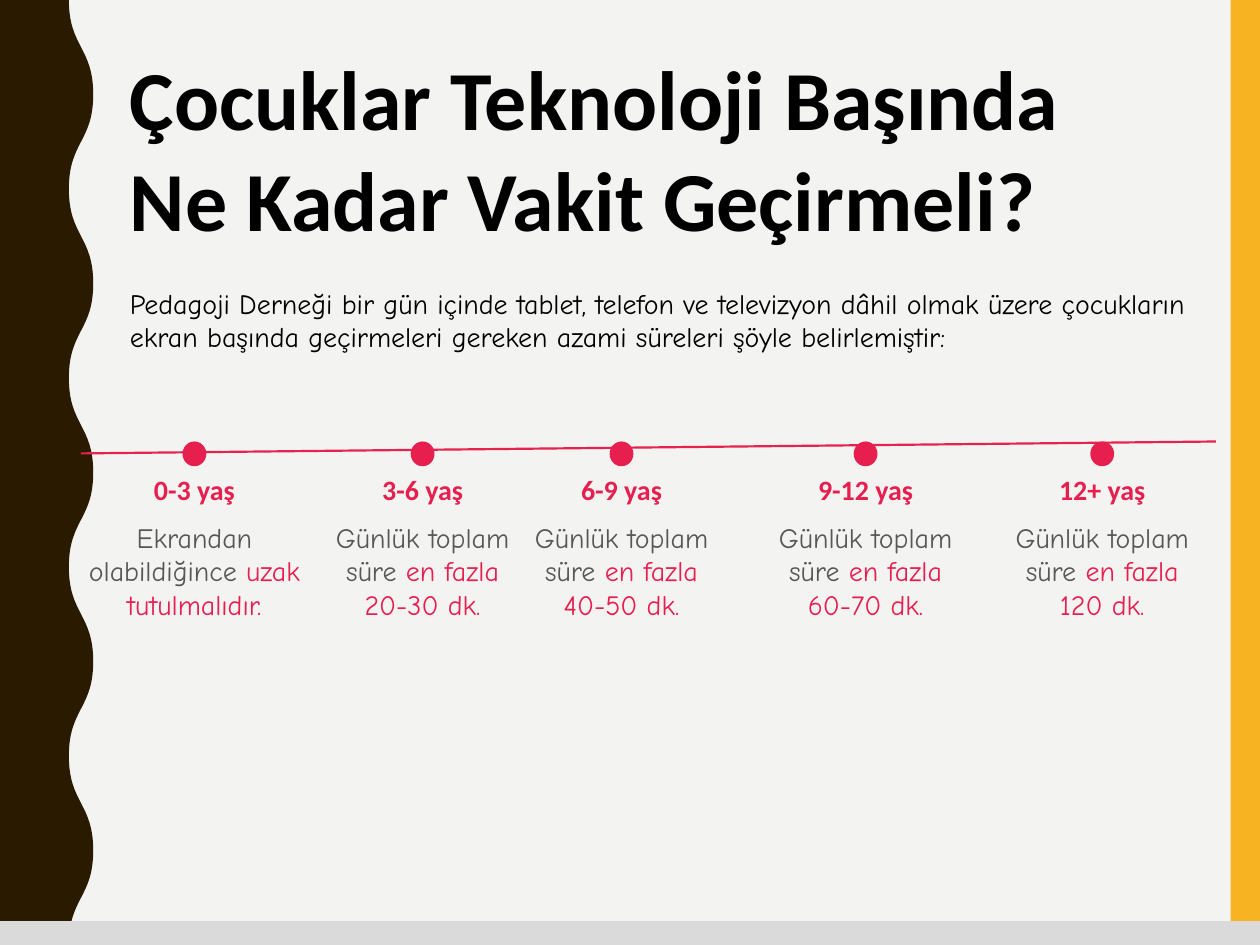
from dataclasses import dataclass

from lxml import etree
from pptx import Presentation
from pptx import util as u
from pptx.dml import color
from pptx.enum import shapes, text
from pptx.oxml import ns

WIDTH, HEIGHT = 25.4, 19.05
DARK, YELLOW, GREY_BAR = "2A1A00", "F8B323", "DADADA"
BACKGROUND, BLACK, GREY = "F3F3F2", "000000", "575757"
RED, LINE_RED = "E61F4F", "E6224F"
HEADING_FONT, BODY_FONT = "Calibri", "Comic Neue"


@dataclass
class Stage:
    center: float
    age: str
    lines: list[list[tuple[str, str]]]
    label_width: float = 2.16
    text_width: float = 4.2


def limited(center: float, age: str, limit: str, label_width: float = 2.16) -> Stage:
    return Stage(center, age, [
        [("Günlük toplam", GREY)],
        [("süre ", GREY), ("en fazla", RED)],
        [(limit, RED)],
    ], label_width)


STAGES = [
    Stage(3.92, "0-3 yaş", [
        [("Ekrandan", GREY)],
        [("olabildiğince ", GREY), ("uzak", RED)],
        [("tutulmalıdır.", RED)],
    ], text_width=5.16),
    limited(8.52, "3-6 yaş", "20-30 dk."),
    limited(12.53, "6-9 yaş", "40-50 dk."),
    limited(17.45, "9-12 yaş", "60-70 dk.", 2.5),
    limited(22.22, "12+ yaş", "120 dk.", 2.3),
]
INTRO = (
    "Pedagoji Derneği bir gün içinde tablet, telefon ve televizyon dâhil olmak "
    "üzere çocukların ekran başında geçirmeleri gereken azami süreleri şöyle "
    "belirlemiştir:"
)


def paint(target, hex_color: str) -> None:
    target.solid()
    target.fore_color.rgb = color.RGBColor.from_string(hex_color)


def finish(shape, hex_color: str) -> None:
    paint(shape.fill, hex_color)
    shape.line.fill.background()
    shape.shadow.inherit = False


def add_block(parent, kind, left: float, top: float, width: float, height: float,
              hex_color: str) -> None:
    shape = parent.add_shape(kind, u.Cm(left), u.Cm(top), u.Cm(width), u.Cm(height))
    finish(shape, hex_color)


def add_wave(parent, inner: float, outer: float, half_waves: int) -> None:
    step = HEIGHT / half_waves
    corners = [(u.Cm(outer if wave % 2 else inner), u.Cm(wave * step))
               for wave in range(half_waves + 1)]
    builder = parent.build_freeform(*corners[0], scale=1.0)
    builder.add_line_segments([*corners[1:], (0, u.Cm(HEIGHT)), (0, 0)], close=True)
    shape = builder.convert_to_shape()
    segments = list(shape._element.iter(ns.qn("a:lnTo")))[:half_waves]
    for segment, (start_x, start_y), (end_x, end_y) in zip(segments, corners, corners[1:]):
        middle = (start_y + end_y) // 2
        segment.tag = ns.qn("a:cubicBezTo")
        for index, x in enumerate((start_x, end_x)):
            control = etree.Element(ns.qn("a:pt"), x=str(int(x)), y=str(middle))
            segment.insert(index, control)
    finish(shape, DARK)


def add_timeline(parent) -> None:
    line = parent.add_connector(shapes.MSO_CONNECTOR.STRAIGHT,
                                u.Cm(1.63), u.Cm(9.14), u.Cm(24.51), u.Cm(8.9))
    paint(line.line.fill, LINE_RED)
    line.line.width = u.Pt(1.25)
    etree.SubElement(line._element.spPr, ns.qn("a:effectLst"))


def add_text(parent, left: float, top: float, width: float, height: float,
             lines: list[list[tuple[str, str]]], wrap: bool = False):
    box = parent.add_textbox(u.Cm(left), u.Cm(top), u.Cm(width), u.Cm(height))
    frame = box.text_frame
    frame.word_wrap = wrap
    frame.auto_size = text.MSO_AUTO_SIZE.SHAPE_TO_FIT_TEXT
    for index, pieces in enumerate(lines):
        paragraph = frame.add_paragraph() if index else frame.paragraphs[0]
        for wording, hex_color in pieces:
            run = paragraph.add_run()
            run.text = wording
            paint(run.font.fill, hex_color)
    return frame.paragraphs


def set_font(paragraph, name: str, size: float, bold: bool = False) -> None:
    paragraph.font.name = name
    paragraph.font.size = u.Pt(size)
    paragraph.font.bold = bold


def add_heading(parent) -> None:
    wordings = ["Çocuklar Teknoloji Başında", "Ne Kadar Vakit Geçirmeli?", INTRO]
    *title, intro = add_text(parent, 2.37, 0.81, 21.82, 7.87,
                             [[(wording, BLACK)] for wording in wordings], wrap=True)
    for paragraph in title:
        set_font(paragraph, HEADING_FONT, 48, bold=True)
    set_font(intro, BODY_FONT, 16)
    intro.space_before = u.Pt(22)


def add_stage(parent, stage: Stage) -> None:
    group = parent.add_group_shape().shapes
    add_block(group, shapes.MSO_SHAPE.OVAL, stage.center - 0.24, 8.9, 0.48, 0.5, RED)
    label = add_text(group, stage.center - stage.label_width / 2, 9.41,
                     stage.label_width, 0.94, [[(stage.age, RED)]])
    advice = add_text(group, stage.center - stage.text_width / 2, 10.36,
                      stage.text_width, 2.31, stage.lines)
    for paragraph in label:
        set_font(paragraph, HEADING_FONT, 16, bold=True)
    for paragraph in advice:
        set_font(paragraph, BODY_FONT, 16)
    for paragraph in (*label, *advice):
        paragraph.alignment = text.PP_ALIGN.CENTER


def main() -> None:
    presentation = Presentation()
    presentation.slide_width, presentation.slide_height = u.Cm(WIDTH), u.Cm(HEIGHT)
    slide = presentation.slides.add_slide(presentation.slide_layouts[6])
    paint(slide.background.fill, BACKGROUND)
    rectangle = shapes.MSO_SHAPE.RECTANGLE
    add_block(slide.shapes, rectangle, 24.81, 0, 0.59, HEIGHT, YELLOW)
    add_wave(slide.shapes, 1.39, 1.88, 10)
    add_timeline(slide.shapes)
    add_heading(slide.shapes)
    add_block(slide.shapes, rectangle, 0, 18.57, WIDTH, 0.48, GREY_BAR)
    for stage in STAGES:
        add_stage(slide.shapes, stage)
    presentation.save("out.pptx")


if __name__ == "__main__":
    main()
